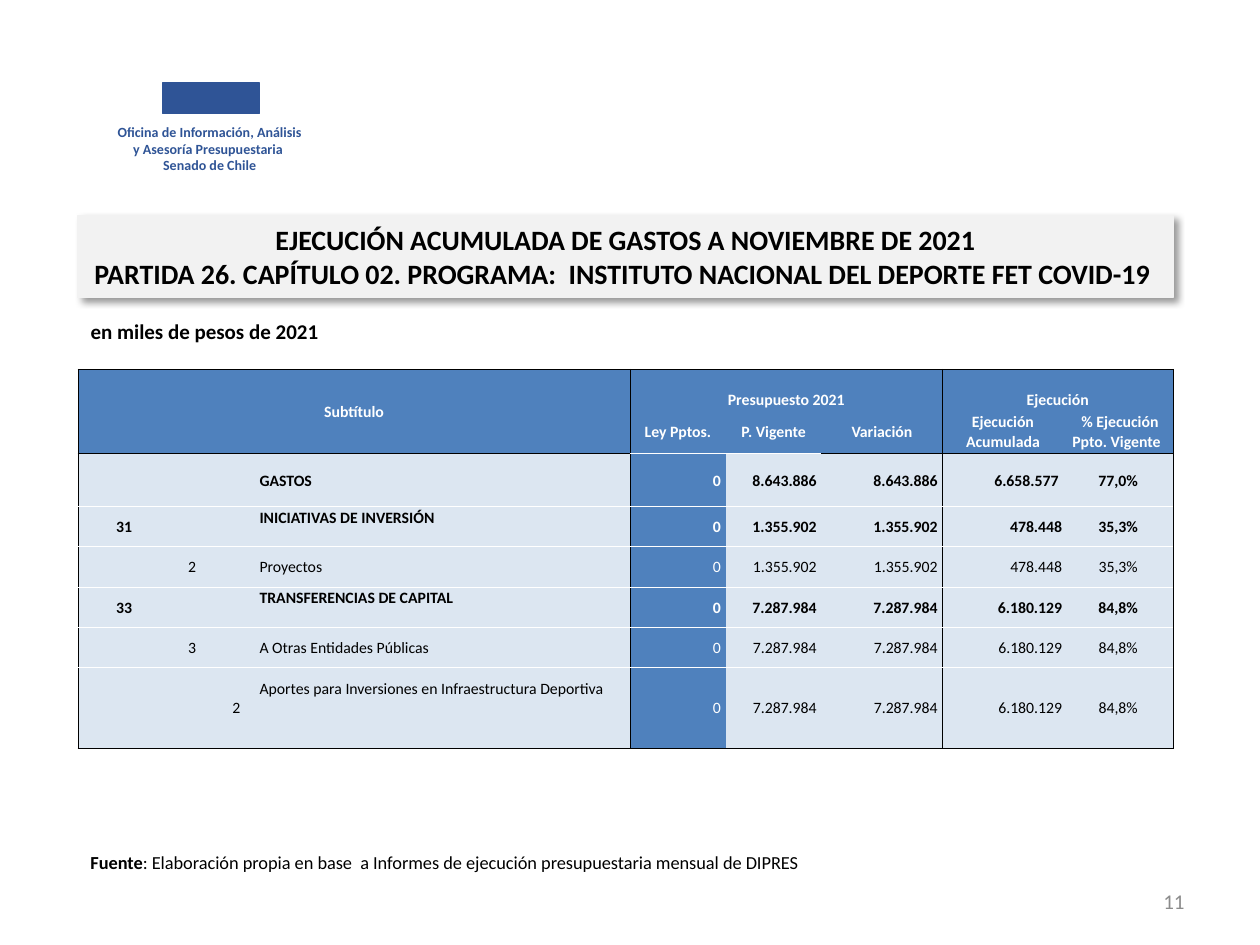
from pptx import Presentation, util as u
from pptx.dml.color import RGBColor
from pptx.enum import shapes, text
from pptx.oxml import parse_xml
from pptx.oxml.ns import nsdecls

BLACK, WHITE, BLUE, PALE, GREY, NAVY = "000000", "FFFFFF", "4F81BD", "DCE6F1", "F2F2F2", "2F5496"
LEFT, MID, RIGHT = text.PP_ALIGN.LEFT, text.PP_ALIGN.CENTER, text.PP_ALIGN.RIGHT
WIDE, HIGH = 10, 7.5

COLS = [0.73, 0.35, 0.35, 2.95, 0.76, 0.76, 0.96, 0.96, 0.87]
ROWS = [0.32, 0.35, 0.42, 0.32, 0.32, 0.32, 0.32, 0.64]
# First cell, last cell and words of each merged heading
GROUPS = {(0, 0): (1, 3, "Subtítulo"), (0, 4): (0, 6, "Presupuesto 2021"),
          (0, 7): (0, 8, "Ejecución")}
HEADS = ["Ley Pptos.", "P. Vigente", "Variación", "Ejecución Acumulada",
         " % Ejecución Ppto. Vigente "]
# Code column, code, label, lines kept free below the label, budget, spent, share, bold
ITEMS = [
    (0, "", "GASTOS", 0, "8.643.886 ", "6.658.577 ", "77,0%", True),
    (0, "31", "INICIATIVAS DE INVERSIÓN", 1, "1.355.902 ", "478.448", "35,3%", True),
    (1, "2", "Proyectos", 0, "1.355.902 ", "478.448", "35,3%", False),
    (0, "33", "TRANSFERENCIAS DE CAPITAL", 1, "7.287.984 ", "6.180.129", "84,8%", True),
    (1, "3", "A Otras Entidades Públicas", 0, "7.287.984 ", "6.180.129", "84,8%", False),
    (2, "2", "Aportes para Inversiones en Infraestructura Deportiva", 2,
     "7.287.984 ", "6.180.129", "84,8%", False),
]


def color(code):
    return RGBColor.from_string(code)


def area(x, y, w, h):
    """Turn percentages of the slide into lengths."""
    return [u.Inches(v * side / 100)
            for v, side in zip((x, y, w, h), (WIDE, HIGH, WIDE, HIGH))]


def add_run(para, words, size, ink=BLACK, bold=False):
    run = para.add_run()
    run.text = words
    font = run.font
    font.name, font.size, font.bold = "Calibri", u.Pt(size), bold
    font.color.rgb = color(ink)


def add_text(slide, place, align=LEFT, anchor=text.MSO_ANCHOR.TOP):
    frame = slide.shapes.add_textbox(*area(*place)).text_frame
    frame.word_wrap = True
    frame.vertical_anchor = anchor
    frame.paragraphs[0].alignment = align
    return frame


def add_panel(slide, place, fill):
    box = slide.shapes.add_shape(shapes.MSO_SHAPE.RECTANGLE, *area(*place))
    box.shadow.inherit = False
    box.fill.solid()
    box.fill.fore_color.rgb = color(fill)
    box.line.color.rgb = color(fill)
    box.line.width = u.Pt(0.75)
    return box


def add_header(slide):
    add_panel(slide, (12.9, 8.8, 7.7, 3.2), NAVY)
    frame = add_text(slide, (8.1, 12.4, 17.1, 9), MID)
    add_run(frame.paragraphs[0], "Oficina de Información, Análisis y Asesoría Presupuestaria ",
            8, NAVY, True)
    para = frame.add_paragraph()
    para.alignment = MID
    add_run(para, "Senado de Chile", 8, NAVY, True)


def add_title(slide):
    box = add_panel(slide, (6.2, 22.8, 86.9, 8.67), GREY)
    effects = box.element.spPr.find(".//{*}effectLst")
    effects.append(parse_xml(
        f'<a:outerShdw {nsdecls("a")} blurRad="{u.Pt(4)}" dist="{u.Pt(3)}" dir="2700000" '
        'algn="tl" rotWithShape="0"><a:srgbClr val="000000"><a:alpha val="40000"/>'
        '</a:srgbClr></a:outerShdw>'))
    frame = box.text_frame
    frame.word_wrap = True
    frame.vertical_anchor = text.MSO_ANCHOR.MIDDLE
    para = frame.paragraphs[0]
    para.alignment = MID
    add_run(para, "EJECUCIÓN ACUMULADA DE GASTOS A NOVIEMBRE DE 2021", 16, bold=True)
    para.add_line_break()
    add_run(para, "PARTIDA 26. CAPÍTULO 02. PROGRAMA:  INSTITUTO NACIONAL DEL DEPORTE "
                  "FET COVID-19 ", 16, bold=True)


def row_line(line, col):
    """Colour of the rule above row number 'line'."""
    if line == 1:
        return None
    if line in (0, len(ROWS)) or (line == 2 and col not in (4, 5)):
        return BLACK
    return WHITE


def col_line(line):
    """Colour of the rule left of column number 'line'."""
    return BLACK if line in (0, 4, 7, len(COLS)) else None


def style_cell(cell, row, col):
    low, right = GROUPS.get((row, col), (row, col))[:2]
    props = cell._tc.get_or_add_tcPr()
    edges = {"L": col_line(col), "R": col_line(right + 1),
             "T": row_line(row, col), "B": row_line(low + 1, col)}
    for side, ink in edges.items():
        paint = (f'<a:solidFill><a:srgbClr val="{ink}"/></a:solidFill>'
                 if ink else "<a:noFill/>")
        props.append(parse_xml(
            f'<a:ln{side} {nsdecls("a")} w="{u.Pt(0.5)}">{paint}</a:ln{side}>'))
    cell.fill.solid()
    cell.fill.fore_color.rgb = color(BLUE if row < 2 or col == 4 else PALE)
    cell.margin_left = cell.margin_right = cell.margin_top = u.Inches(0.01)
    cell.margin_bottom = 0
    cell.vertical_anchor = text.MSO_ANCHOR.MIDDLE
    cell.text_frame.paragraphs[0].font.size = u.Pt(9)


def put(cell, words, ink=BLACK, bold=True, align=MID):
    para = cell.text_frame.paragraphs[0]
    para.alignment = align
    add_run(para, words, 9, ink, bold)


def add_budget(slide):
    place = area(6.2, 39.07, 86.9, 40.4)
    grid = slide.shapes.add_table(len(ROWS), len(COLS), *place).table
    for col, size in zip(grid.columns, COLS):
        col.width = u.Inches(size)
    for row, size in zip(grid.rows, ROWS):
        row.height = u.Inches(size)
    for row in range(len(ROWS)):
        for col in range(len(COLS)):
            style_cell(grid.cell(row, col), row, col)

    # Headings
    for (top, left), (low, right, words) in GROUPS.items():
        cell = grid.cell(top, left)
        cell.merge(grid.cell(low, right))
        put(cell, words, WHITE)
        if low == top:
            cell.vertical_anchor = text.MSO_ANCHOR.BOTTOM
    for col, words in enumerate(HEADS, 4):
        put(grid.cell(1, col), words, WHITE)

    # Budget lines
    for row, (spot, code, label, free, total, spent, share, bold) in enumerate(ITEMS, 2):
        if code:
            put(grid.cell(row, spot), code, bold=bold)
        put(grid.cell(row, 3), label, bold=bold, align=LEFT)
        grid.cell(row, 3).margin_bottom = u.Inches(0.15 * free)
        put(grid.cell(row, 4), "0 ", WHITE, bold, RIGHT)
        for col, words in enumerate((total, total, spent), 5):
            put(grid.cell(row, col), words, bold=bold, align=RIGHT)
        put(grid.cell(row, 8), share, bold=bold)


def main():
    deck = Presentation()
    deck.slide_width, deck.slide_height = u.Inches(WIDE), u.Inches(HIGH)
    slide = deck.slides.add_slide(deck.slide_layouts[6])

    # Heading
    add_header(slide)
    add_title(slide)
    unit = add_text(slide, (6.2, 33.07, 86.1, 4.27)).paragraphs[0]
    add_run(unit, "en miles de pesos de 2021", 12, bold=True)

    # Table
    add_budget(slide)

    # Source and page number
    note = add_text(slide, (6.2, 89.47, 85.3, 3.2)).paragraphs[0]
    add_run(note, "Fuente", 10.5, bold=True)
    add_run(note, ": Elaboración propia en base  a Informes de ejecución presupuestaria "
                  "mensual de DIPRES", 10.5)
    page = add_text(slide, (71.7, 92.67, 23.3, 5.33), RIGHT, text.MSO_ANCHOR.MIDDLE)
    add_run(page.paragraphs[0], "11", 12, "8C8C8C")

    deck.save("out.pptx")


if __name__ == "__main__":
    main()
